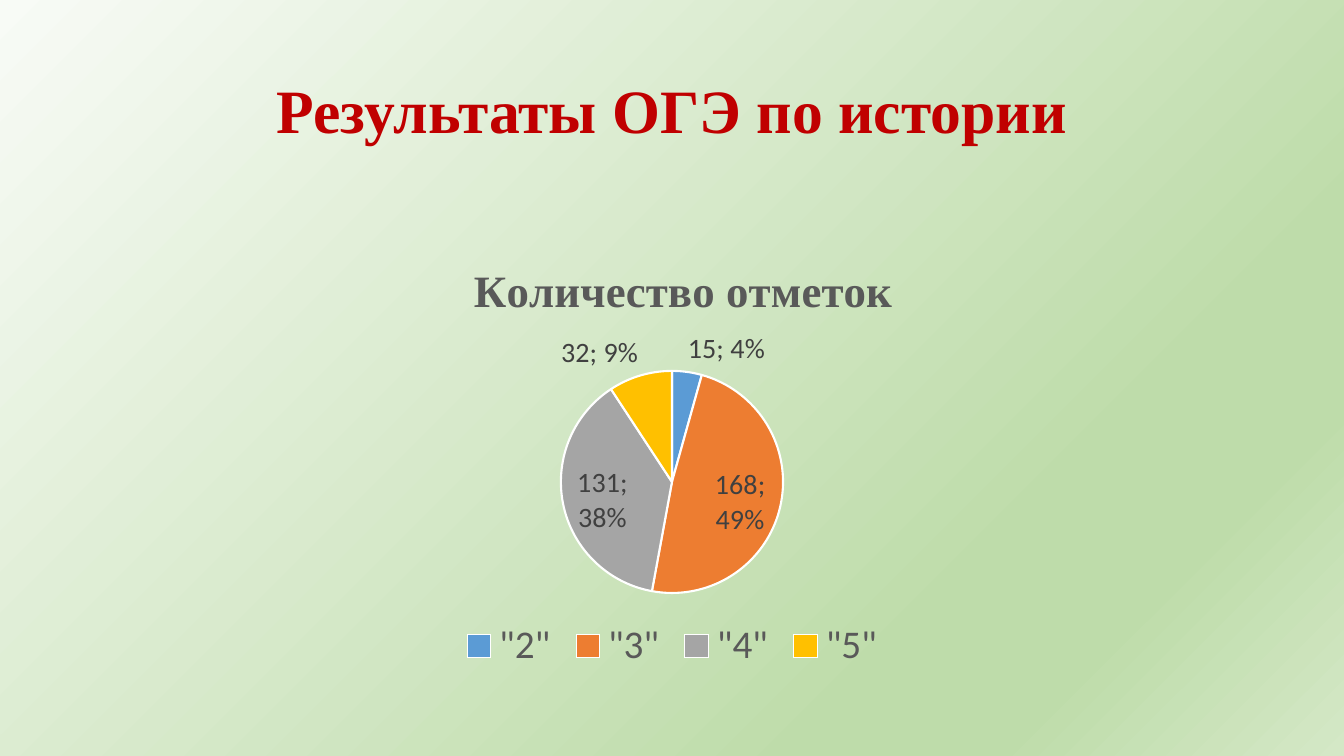
from lxml.etree import SubElement
from pptx import Presentation
from pptx.chart.data import CategoryChartData
from pptx.dml.color import RGBColor
from pptx.enum.chart import XL_CHART_TYPE, XL_LABEL_POSITION, XL_LEGEND_POSITION
from pptx.enum.text import MSO_ANCHOR, PP_ALIGN
from pptx.oxml.ns import qn
from pptx.util import Inches, Pt

RED = RGBColor(0xC0, 0x00, 0x00)
GRAY = RGBColor(0x59, 0x59, 0x59)
DARK_GRAY = RGBColor(0x40, 0x40, 0x40)
WHITE = RGBColor(0xFF, 0xFF, 0xFF)
MARK_COLORS = [
    RGBColor(0x5B, 0x9B, 0xD5),
    RGBColor(0xED, 0x7D, 0x31),
    RGBColor(0xA5, 0xA5, 0xA5),
    RGBColor(0xFF, 0xC0, 0x00),
]
BACKGROUND_STOPS = [
    (0, RGBColor(0xF8, 0xFB, 0xF6)),
    (74, RGBColor(0xBE, 0xDC, 0xAA)),
    (83, RGBColor(0xBE, 0xDC, 0xAA)),
    (100, RGBColor(0xD4, 0xE8, 0xC6)),
]
MARK_COUNTS = {'"2"': 15, '"3"': 168, '"4"': 131, '"5"': 32}


class SlideBuilder:
    heading_font = "Times New Roman"
    body_font = "Calibri"
    columns = 24
    rows = 10

    def __init__(self, deck):
        self.deck = deck
        self.page = deck.slides.add_slide(deck.slide_layouts[6])

    def area(self, column, row, width, height):
        column_width = self.deck.slide_width / self.columns
        row_height = self.deck.slide_height / self.rows
        return (
            round(column * column_width),
            round(row * row_height),
            round(width * column_width),
            round(height * row_height),
        )

    def style(self, font, name, size, color, bold=False):
        font.name = name
        font.size = Pt(size)
        font.color.rgb = color
        font.bold = bold

    def background(self, stops):
        fill = self.page.background.fill
        fill.gradient()
        fill.gradient_angle = 315
        stop_list = self.page.element.find(".//" + qn("a:gsLst"))
        stop_list.clear()
        for position, color in stops:
            stop = SubElement(stop_list, qn("a:gs"), pos=str(position * 1000))
            SubElement(stop, qn("a:srgbClr"), val=str(color))

    def title(self, text, *place):
        box = self.page.shapes.add_textbox(*self.area(*place))
        frame = box.text_frame
        frame.word_wrap = True
        frame.vertical_anchor = MSO_ANCHOR.MIDDLE
        frame.text = text
        para = frame.paragraphs[0]
        para.alignment = PP_ALIGN.CENTER
        para.line_spacing = 0.9
        self.style(para.runs[0].font, self.heading_font, 44, RED, True)

    def chart_layout(self, parent, index, **settings):
        for layout in parent.findall(qn("c:layout")):
            parent.remove(layout)
        layout = SubElement(parent, qn("c:layout"))
        parent.insert(index, layout)
        manual = SubElement(layout, qn("c:manualLayout"))
        for name, value in settings.items():
            SubElement(manual, qn("c:" + name), val=str(value))

    def pie(self, heading, counts, colors, *place):
        data = CategoryChartData()
        data.categories = list(counts)
        data.add_series(heading, list(counts.values()))
        chart = self.page.shapes.add_chart(
            XL_CHART_TYPE.PIE, *self.area(*place), data
        ).chart
        chart.font.name = self.body_font
        chart.font.size = Pt(10)

        chart.has_title = True
        title = chart.chart_title
        title.include_in_layout = False
        title.text_frame.text = heading
        span = title.text_frame.paragraphs[0].runs[0]
        self.style(span.font, self.heading_font, 32, GRAY, True)

        chart.has_legend = True
        chart.legend.position = XL_LEGEND_POSITION.BOTTOM
        chart.legend.include_in_layout = False
        self.style(chart.legend.font, self.body_font, 28, GRAY)

        plot = chart.plots[0]
        plot.vary_by_categories = True
        for index, color in enumerate(colors):
            slice_format = plot.series[0].points[index].format
            slice_format.fill.solid()
            slice_format.fill.fore_color.rgb = color
            slice_format.line.color.rgb = WHITE
            slice_format.line.width = Pt(1.5)

        labels = plot.series[0].data_labels
        labels.show_value = True
        labels.show_percentage = True
        labels.position = XL_LABEL_POSITION.BEST_FIT
        self.style(labels.font, self.body_font, 20, DARK_GRAY)

        chart_root = chart.element
        self.chart_layout(
            chart_root.find(".//" + qn("c:title")), 1,
            xMode="edge", yMode="edge", x=0.27, y=0.06,
        )
        self.chart_layout(
            chart_root.find(".//" + qn("c:plotArea")), 0,
            layoutTarget="inner", xMode="edge", yMode="edge",
            x=0.376, y=0.32, w=0.248, h=0.493,
        )


def main():
    deck = Presentation()
    deck.slide_width = Inches(13.33)
    deck.slide_height = Inches(7.5)
    builder = SlideBuilder(deck)
    builder.background(BACKGROUND_STOPS)
    builder.title("Результаты ОГЭ по истории", 1.65, 0.53, 20.7, 1.93)
    builder.pie("Количество отметок", MARK_COUNTS, MARK_COLORS, 4, 3, 16, 5.96)
    deck.save("out.pptx")


if __name__ == "__main__":
    main()
